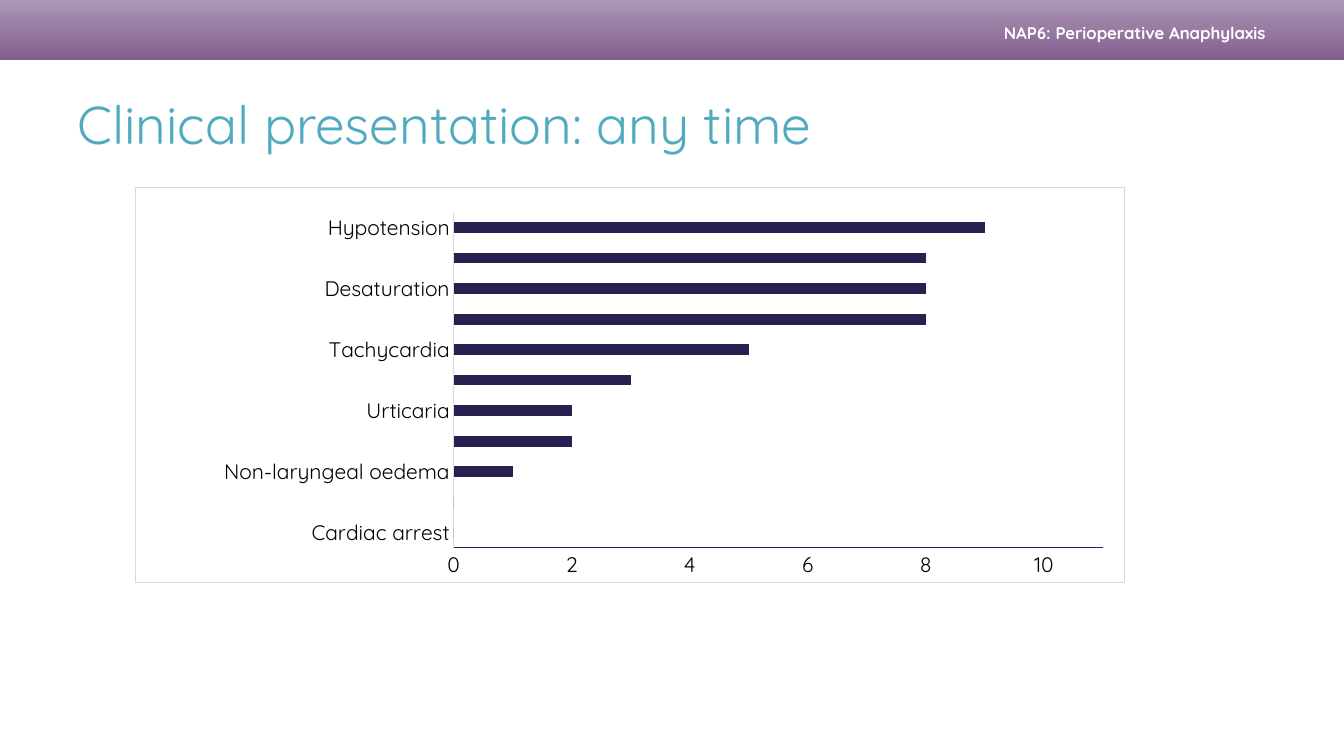
from lxml import etree
from copy import deepcopy
from pptx import Presentation
from pptx.chart.data import CategoryChartData
from pptx.dml.color import RGBColor
from pptx.enum.chart import XL_CHART_TYPE, XL_TICK_MARK
from pptx.enum.shapes import MSO_SHAPE
from pptx.enum.text import MSO_ANCHOR, PP_ALIGN
from pptx.oxml import parse_xml
from pptx.oxml.ns import nsdecls, qn
from pptx.util import Cm, Pt

BAR, NO_TICK = XL_CHART_TYPE.BAR_CLUSTERED, XL_TICK_MARK.NONE
RECTANGLE, MIDDLE = MSO_SHAPE.RECTANGLE, MSO_ANCHOR.MIDDLE
LEFT, RIGHT = PP_ALIGN.LEFT, PP_ALIGN.RIGHT

# Content
HEADER = "NAP6: Perioperative Anaphylaxis"
TITLE = "Clinical presentation: any time"
SERIES = "Series 1"
FEATURES = [  # from the bottom bar to the top one
    ("Cardiac arrest", 0),
    ("Laryngeal oedema", 0),
    ("Non-laryngeal oedema", 1),
    ("Bradycardia", 2),
    ("Urticaria", 2),
    ("Reduced capnography trace", 3),
    ("Tachycardia", 5),
    ("non-urticarial rash", 8),
    ("Desaturation", 8),
    ("Bronchospasm/raised airway pressure", 8),
    ("Hypotension", 9),
]

THEME = {
    "font": "Quicksand",
    "header_size": 12, "title_size": 38, "chart_size": 15,
    "white": "FFFFFF", "title": "50ABBF", "text": "000000",
    "bar": "291F51", "rule": "D9D9D9",
    "band": [(0, "815D8D"), (0.55, "997DA3"), (1, "AD98B6")],
}
SLIDE_W, SLIDE_H, BAND_H = Cm(33.87), Cm(19.05), Cm(1.52)
PLOT_AREA = {"x": 0.322, "y": 0.064, "w": 0.656, "h": 0.85}


def color(name):
    return RGBColor.from_string(THEME[name])


def add_text(slide, text, box, *, size, ink, bold=False, align=LEFT, right_inset=0.25):
    frame = slide.shapes.add_textbox(*map(Cm, box)).text_frame
    frame.word_wrap = True
    frame.vertical_anchor = MIDDLE
    frame.margin_right = Cm(right_inset)
    paragraph = frame.paragraphs[0]
    paragraph.alignment = align
    run = paragraph.add_run()
    run.text = text
    run.font.name = THEME["font"]
    run.font.size = Pt(THEME[size])
    run.font.bold = bold
    run.font.color.rgb = color(ink)


def add_band(slide):
    band = slide.shapes.add_shape(RECTANGLE, 0, 0, SLIDE_W, BAND_H)
    band.shadow.inherit = False
    band.line.fill.background()
    band.fill.gradient()
    band.fill.gradient_angle = 90
    first_stop = band.fill._fill._gradFill.find(qn("a:gsLst"))[0]
    first_stop.addnext(deepcopy(first_stop))
    for stop, (position, tone) in zip(band.fill.gradient_stops, THEME["band"]):
        stop.position = position
        stop.color.rgb = RGBColor.from_string(tone)


def style_axis(axis, line):
    axis.major_tick_mark = axis.minor_tick_mark = NO_TICK
    axis.has_major_gridlines = False
    axis.format.line.color.rgb = color(line)
    axis.format.line.width = Pt(0.75)


def frame_chart(chart):
    """Set the chart's background, border and inner plot area."""
    space = chart._chartSpace
    space.find(qn("c:chart")).addnext(parse_xml(
        f'<c:spPr {nsdecls("c", "a")}>'
        f'<a:solidFill><a:srgbClr val="{THEME["white"]}"/></a:solidFill>'
        f'<a:ln w="{Pt(0.75)}"><a:solidFill><a:srgbClr val="{THEME["rule"]}"/>'
        '</a:solidFill></a:ln></c:spPr>'))
    plot_area = space.find(".//" + qn("c:plotArea"))
    for layout in plot_area.findall(qn("c:layout")):
        plot_area.remove(layout)
    layout = etree.Element(qn("c:layout"))
    manual = etree.SubElement(layout, qn("c:manualLayout"))
    settings = {"layoutTarget": "inner", "xMode": "edge", "yMode": "edge", **PLOT_AREA}
    for tag, value in settings.items():
        etree.SubElement(manual, qn(f"c:{tag}")).set("val", str(value))
    plot_area.insert(0, layout)


def add_feature_chart(slide, box):
    data = CategoryChartData()
    data.categories = [feature for feature, _ in FEATURES]
    data.add_series(SERIES, [count for _, count in FEATURES])
    chart = slide.shapes.add_chart(BAR, *map(Cm, box), data).chart
    chart.has_legend = chart.has_title = False
    chart.font.name = THEME["font"]
    chart.font.size = Pt(THEME["chart_size"])
    chart.font.color.rgb = color("text")

    bars = chart.plots[0]
    bars.gap_width = 182
    bars.vary_by_categories = False
    bars.series[0].format.fill.solid()
    bars.series[0].format.fill.fore_color.rgb = color("bar")

    style_axis(chart.category_axis, "rule")
    counts = chart.value_axis
    style_axis(counts, "bar")
    counts.minimum_scale, counts.maximum_scale, counts.major_unit = 0, 11, 2
    frame_chart(chart)


def main():
    deck = Presentation()
    deck.slide_width, deck.slide_height = SLIDE_W, SLIDE_H
    slide = deck.slides.add_slide(deck.slide_layouts[6])

    # Header band
    add_band(slide)
    add_text(slide, HEADER, (21.21, 0.46, 11.3, 0.71), size="header_size",
             ink="white", bold=True, align=RIGHT, right_inset=0.61)

    # Title and chart
    add_text(slide, TITLE, (1.7, 1.52, 30.48, 3.18), size="title_size", ink="title")
    add_feature_chart(slide, (3.39, 4.7, 24.97, 9.98))

    deck.save("out.pptx")


if __name__ == "__main__":
    main()
